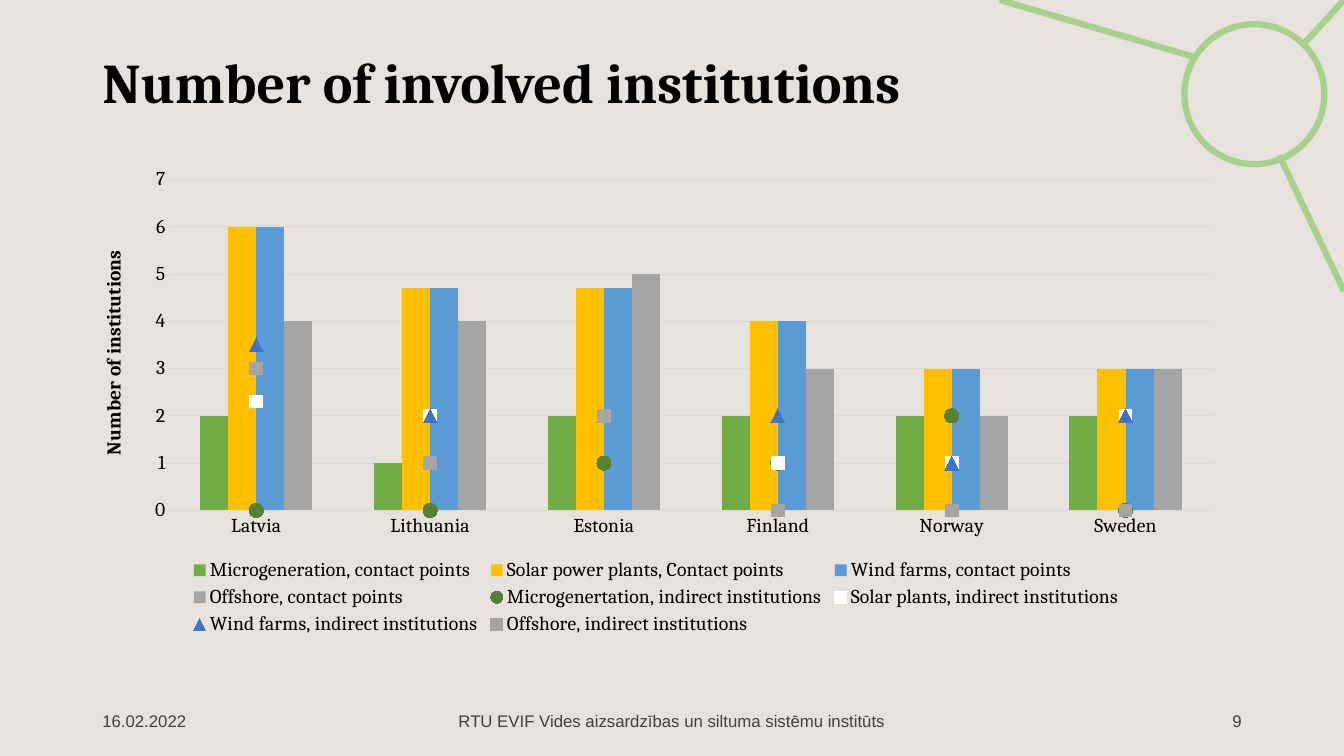
from dataclasses import dataclass

from lxml.etree import SubElement
from pptx import Presentation
from pptx.chart.data import CategoryChartData
from pptx.dml.color import RGBColor
from pptx.enum.chart import XL_CHART_TYPE, XL_LEGEND_POSITION, XL_MARKER_STYLE, XL_TICK_MARK
from pptx.enum.shapes import MSO_CONNECTOR, MSO_SHAPE
from pptx.enum.text import MSO_ANCHOR, MSO_AUTO_SIZE, PP_ALIGN
from pptx.oxml import parse_xml
from pptx.oxml.ns import nsdecls, qn
from pptx.util import Pt


@dataclass(frozen=True)
class Theme:
    back: str = "E7E2DD"
    ink: str = "000000"
    foot: str = "404040"
    net: str = "A9D18E"
    grid: str = "D9D9D9"
    serif: str = "Cambria"
    sans: str = "Arial"
    head_size: int = 40
    chart_size: int = 14
    foot_size: int = 12
    net_width: float = 4.5
    grid_width: float = 0.75


THEME = Theme()

LANDS = ["Latvia", "Lithuania", "Estonia", "Finland", "Norway", "Sweden"]

BARS = [
    ("Microgeneration, contact points", [2, 1, 2, 2, 2, 2], "70AD47"),
    ("Solar power plants, Contact points", [6, 4.7, 4.7, 4, 3, 3], "FFC000"),
    ("Wind farms, contact points", [6, 4.7, 4.7, 4, 3, 3], "5B9BD5"),
    ("Offshore, contact points", [4, 4, 5, 3, 2, 3], "A5A5A5"),
]

MARKS = [
    ("Microgenertation, indirect institutions", [0, 0, 1, 1, 2, 0], "548235",
     XL_MARKER_STYLE.CIRCLE, 10),
    ("Solar plants, indirect institutions", [2.3, 2, 2, 1, 1, 2], "FFFFFF",
     XL_MARKER_STYLE.SQUARE, 9),
    ("Wind farms, indirect institutions", [3.5, 2, 2, 2, 1, 2], "4472C4",
     XL_MARKER_STYLE.TRIANGLE, 10),
    ("Offshore, indirect institutions", [3, 1, 2, 0, 0, 0], "A5A5A5",
     XL_MARKER_STYLE.SQUARE, 9),
]

LINKS = [
    (960, 208, 913.7, 110.9),
    (851.8, 40.3, 714.2, 0),
    (960, 0, 931, 31.7),
]

NOTES = [
    (66, 216, "16.02.2022", PP_ALIGN.LEFT),
    (318, 324, "RTU EVIF Vides aizsardzības un siltuma sistēmu institūts", PP_ALIGN.CENTER),
    (678, 216, "9", PP_ALIGN.RIGHT),
]


def set_font(font, face, size, color, bold=False):
    font.name = face
    font.size = Pt(size)
    font.bold = bold
    font.color.rgb = RGBColor.from_string(color)


def set_fill(fill, color):
    fill.solid()
    fill.fore_color.rgb = RGBColor.from_string(color)


def set_line(line, color, width):
    line.color.rgb = RGBColor.from_string(color)
    line.width = Pt(width)


def add_ring(slide, left, top, size):
    ring = slide.shapes.add_shape(MSO_SHAPE.OVAL, Pt(left), Pt(top), Pt(size), Pt(size))
    ring.shadow.inherit = False
    ring.fill.background()
    set_line(ring.line, THEME.net, THEME.net_width)


def add_link(slide, *ends):
    link = slide.shapes.add_connector(MSO_CONNECTOR.STRAIGHT, *map(Pt, ends))
    set_line(link.line, THEME.net, THEME.net_width)
    SubElement(link._element.spPr, qn("a:effectLst"))


def set_title(slide, text):
    title = slide.shapes.title
    title.left, title.top, title.width, title.height = Pt(66), Pt(28.8), Pt(744.5), Pt(64.8)
    frame = title.text_frame
    frame.text = text
    frame.auto_size = MSO_AUTO_SIZE.NONE
    frame.vertical_anchor = MSO_ANCHOR.MIDDLE
    line = frame.paragraphs[0]
    line.alignment = PP_ALIGN.LEFT
    line.line_spacing = 0.9
    set_font(line.runs[0].font, THEME.serif, THEME.head_size, THEME.ink, True)


def add_note(slide, left, width, text, align):
    frame = slide.shapes.add_textbox(Pt(left), Pt(500.5), Pt(width), Pt(28.8)).text_frame
    frame.word_wrap = True
    frame.vertical_anchor = MSO_ANCHOR.MIDDLE
    frame.text = text
    line = frame.paragraphs[0]
    line.alignment = align
    set_font(line.runs[0].font, THEME.sans, THEME.foot_size, THEME.foot)


def split_marks(chart):
    bars = chart._chartSpace.find(".//" + qn("c:barChart"))
    lines = parse_xml(
        f'<c:lineChart {nsdecls("c")}><c:grouping val="standard"/>'
        '<c:varyColors val="0"/></c:lineChart>')
    for item in bars.findall(qn("c:ser"))[len(BARS):]:
        for flag in item.findall(qn("c:invertIfNegative")):
            item.remove(flag)
        lines.append(item)
    SubElement(lines, qn("c:marker"), val="1")
    for axis in bars.findall(qn("c:axId")):
        SubElement(lines, qn("c:axId"), val=axis.get("val"))
    bars.addnext(lines)


def set_plot_box(chart, **box):
    area = chart._chartSpace.find(".//" + qn("c:plotArea"))
    for old in area.findall(qn("c:layout")):
        area.remove(old)
    parts = "".join(f'<c:{key} val="{value}"/>' for key, value in box.items())
    area.insert(0, parse_xml(
        f'<c:layout {nsdecls("c")}><c:manualLayout><c:layoutTarget val="inner"/>'
        f'<c:xMode val="edge"/><c:yMode val="edge"/>{parts}</c:manualLayout></c:layout>'))


def style_plots(chart):
    bars, lines = chart.plots
    bars.gap_width = 219
    bars.overlap = 0
    bars.vary_by_categories = False
    for series, (_, _, color) in zip(bars.series, BARS):
        set_fill(series.format.fill, color)
    for series, (_, _, color, style, size) in zip(lines.series, MARKS):
        series.smooth = False
        series.format.line.fill.background()
        series.marker.style = style
        series.marker.size = size
        set_fill(series.marker.format.fill, color)
        series.marker.format.line.fill.background()


def style_axes(chart):
    lands, count = chart.category_axis, chart.value_axis
    for axis in (lands, count):
        axis.major_tick_mark = axis.minor_tick_mark = XL_TICK_MARK.NONE
    set_line(lands.format.line, THEME.grid, THEME.grid_width)
    count.format.line.fill.background()
    count.minimum_scale, count.maximum_scale, count.major_unit = 0, 7, 1
    set_line(count.major_gridlines.format.line, THEME.grid, THEME.grid_width)
    frame = count.axis_title.text_frame
    frame.text = "Number of institutions"
    set_font(frame.paragraphs[0].runs[0].font, THEME.serif, THEME.chart_size, THEME.ink, True)


def add_graph(slide):
    data = CategoryChartData()
    data.categories = LANDS
    for name, values, *_ in BARS + MARKS:
        data.add_series(name, values)
    chart = slide.shapes.add_chart(
        XL_CHART_TYPE.COLUMN_CLUSTERED, Pt(54.7), Pt(114.5), Pt(828), Pt(342.7), data).chart
    chart.has_title = False
    set_font(chart.font, THEME.serif, THEME.chart_size, THEME.ink)
    split_marks(chart)
    style_plots(chart)
    style_axes(chart)
    chart.has_legend = True
    chart.legend.position = XL_LEGEND_POSITION.BOTTOM
    chart.legend.include_in_layout = False
    set_plot_box(chart, x=0.08, y=0.04, w=0.9, h=0.69)


def main():
    deck = Presentation()
    deck.slide_width, deck.slide_height = Pt(960), Pt(540)
    slide = deck.slides.add_slide(deck.slide_layouts[5])
    set_fill(slide.background.fill, THEME.back)
    add_ring(slide, 846, 17.3, 100)
    for link in LINKS:
        add_link(slide, *link)
    set_title(slide, "Number of involved institutions")
    for note in NOTES:
        add_note(slide, *note)
    add_graph(slide)
    deck.save("out.pptx")


if __name__ == "__main__":
    main()
